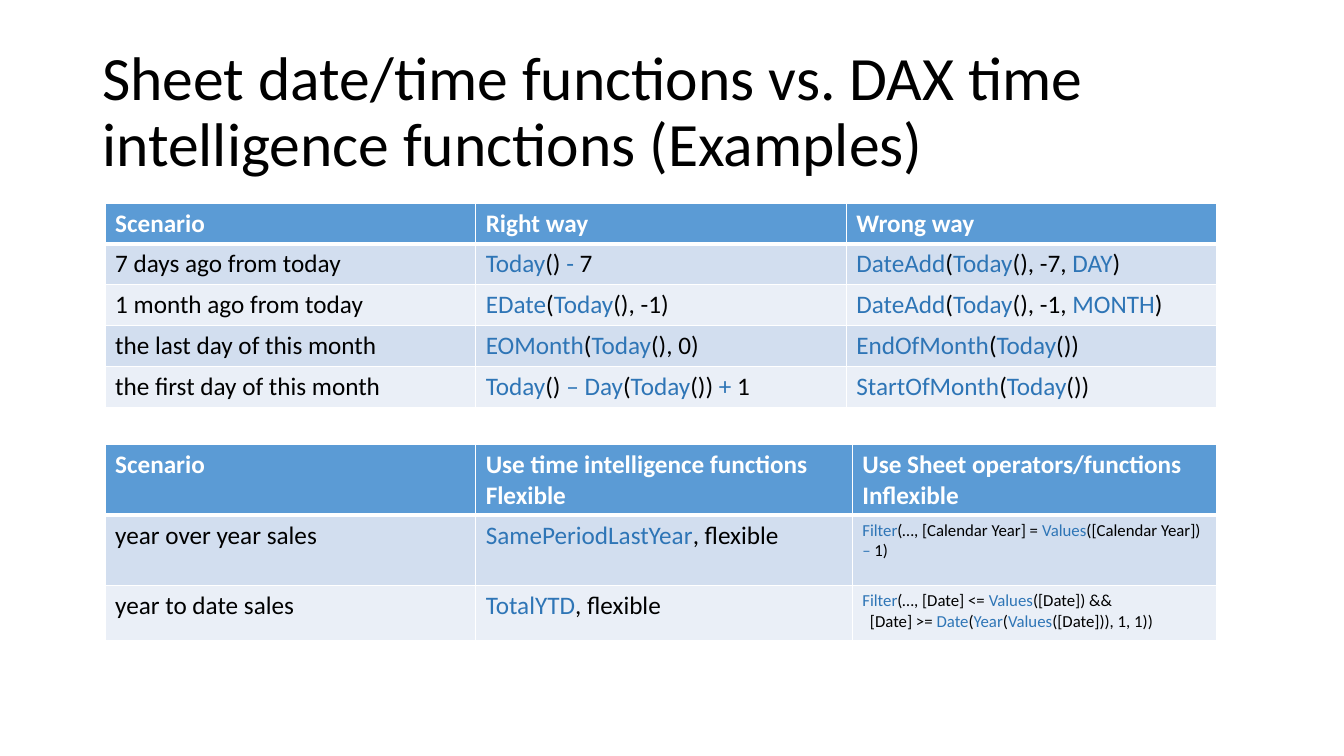
from lxml.etree import SubElement
from pptx import Presentation
from pptx.dml.color import RGBColor
from pptx.enum.text import MSO_ANCHOR
from pptx.oxml.ns import qn
from pptx.util import Pt

COLORS = {
    "header": "5B9BD5",
    "band_dark": "D2DEEF",
    "band_light": "EAEFF7",
    "function": "2E75B6",
    "text": "000000",
    "white": "FFFFFF",
}
FONT = "Calibri"
TABLE_LEFT = 75.1


def write_line(paragraph, line, size, color, bold=False):
    paragraph.font.name = FONT
    paragraph.font.size = Pt(size)
    paragraph.font.bold = bold
    for index, part in enumerate(line.split("`")):
        if part:
            run = paragraph.add_run()
            run.text = part
            run.font.color.rgb = RGBColor.from_string(COLORS["function" if index % 2 else color])


def set_border(cell, side, width):
    line = SubElement(cell._tc.get_or_add_tcPr(), qn(f"a:{side}"), w=str(Pt(width)))
    fill = SubElement(line, qn("a:solidFill"))
    SubElement(fill, qn("a:srgbClr"), val=COLORS["white"])


presentation = Presentation()
presentation.slide_width = Pt(960)
presentation.slide_height = Pt(540)
slide = presentation.slides.add_slide(presentation.slide_layouts[6])

title = slide.shapes.add_textbox(Pt(66), Pt(28.75), Pt(828), Pt(104.4))
title_frame = title.text_frame
title_frame.word_wrap = True
title_frame.vertical_anchor = MSO_ANCHOR.MIDDLE
title_frame.paragraphs[0].line_spacing = 0.9
write_line(
    title_frame.paragraphs[0],
    "Sheet date/time functions vs. DAX time intelligence functions (Examples)",
    44,
    "text",
)

# Text between backticks takes the function colour.
tables = [
    {
        "top": 317.5,
        "widths": [264.7, 269, 260.5],
        "heights": [50.4, 50.4, 38.9],
        "rows": [
            ["Scenario", "Use time intelligence functions\nFlexible",
             "Use Sheet operators/functions\nInflexible"],
            ["year over year sales", "`SamePeriodLastYear`, flexible",
             "`Filter`(…, [Calendar Year] = `Values`([Calendar Year]) `–` 1)"],
            ["year to date sales", "`TotalYTD`, flexible",
             "`Filter`(…, [Date] <= `Values`([Date]) &&\n"
             "[Date] >= `Date`(`Year`(`Values`([Date])), 1, 1))"],
        ],
        "formula_size": 12,
    },
    {
        "top": 145,
        "widths": [264.7] * 3,
        "heights": [29.2] * 5,
        "rows": [
            ["Scenario", "Right way", "Wrong way"],
            ["7 days ago from today", "`Today`() `-` 7", "`DateAdd`(`Today`(), -7, `DAY`)"],
            ["1 month ago from today", "`EDate`(`Today`(), -1)",
             "`DateAdd`(`Today`(), -1, `MONTH`)"],
            ["the last day of this month", "`EOMonth`(`Today`(), 0)", "`EndOfMonth`(`Today`())"],
            ["the first day of this month", "`Today`() `– Day`(`Today`()) `+` 1",
             "`StartOfMonth`(`Today`())"],
        ],
        "formula_size": 18,
    },
]

for data in tables:
    rows, widths, heights = data["rows"], data["widths"], data["heights"]
    table = slide.shapes.add_table(
        len(rows), len(widths), Pt(TABLE_LEFT), Pt(data["top"]), Pt(sum(widths)), Pt(sum(heights))
    ).table
    for column, width in zip(table.columns, widths):
        column.width = Pt(width)
    for row_index, texts in enumerate(rows):
        table.rows[row_index].height = Pt(heights[row_index])
        is_header = row_index == 0
        band = "header" if is_header else "band_dark" if row_index % 2 else "band_light"
        for column_index, text in enumerate(texts):
            cell = table.cell(row_index, column_index)
            for side in ("lnL", "lnR", "lnT", "lnB"):
                under_header = (row_index, side) in ((0, "lnB"), (1, "lnT"))
                set_border(cell, side, 3 if under_header else 1)
            cell.fill.solid()
            cell.fill.fore_color.rgb = RGBColor.from_string(COLORS[band])
            size = data["formula_size"] if column_index == 2 and not is_header else 18
            for line_index, line in enumerate(text.split("\n")):
                frame = cell.text_frame
                paragraph = frame.add_paragraph() if line_index else frame.paragraphs[0]
                write_line(paragraph, line, size, "white" if is_header else "text", is_header)
                if line_index and not is_header:
                    paragraph._p.get_or_add_pPr().set("marL", str(Pt(5.4)))

presentation.save("out.pptx")
